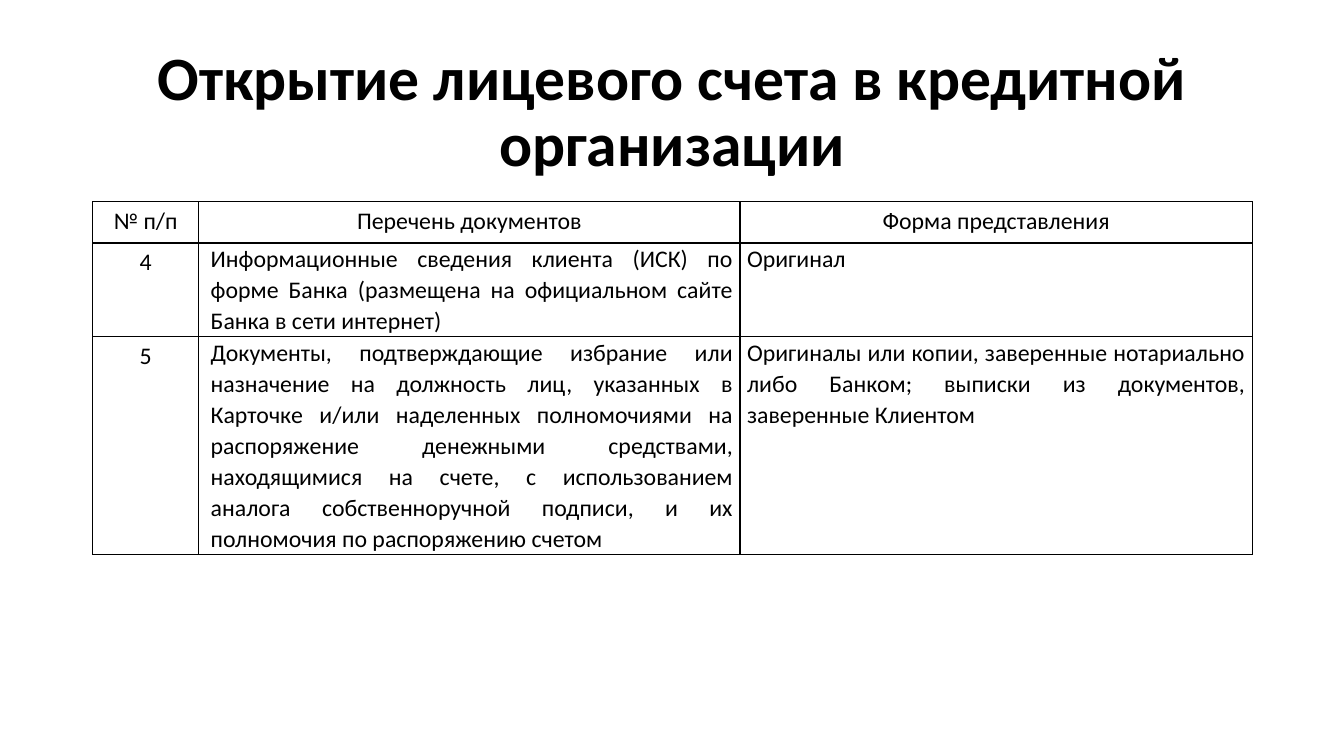
from dataclasses import dataclass

from lxml import etree
from pptx import Presentation
from pptx.dml.color import RGBColor
from pptx.enum.text import MSO_ANCHOR, MSO_AUTO_SIZE, PP_ALIGN
from pptx.oxml.ns import qn
from pptx.util import Pt

CENTER, JUSTIFY = PP_ALIGN.CENTER, PP_ALIGN.JUSTIFY
MIDDLE = MSO_ANCHOR.MIDDLE
NO_AUTOFIT = MSO_AUTO_SIZE.NONE
TITLE_ONLY = 5
EMU_PER_PX = 9144


@dataclass(frozen=True)
class Theme:
    """Colours, font and type sizes of the slide."""
    font: str = "Calibri"
    ink: str = "000000"
    paper: str = "FFFFFF"
    title_size: int = 44
    table_size: int = 17
    border: int = 1


THEME = Theme()
TITLE = "Открытие лицевого счета в кредитной организации"
COLUMNS = (105, 537, 508)
ROW_HEIGHTS = (41, 92, 208)
ROWS = (
    ("№ п/п", "Перечень документов", "Форма представления"),
    ("4",
     "Информационные сведения клиента (ИСК) по форме Банка "
     "(размещена на официальном сайте Банка в сети интернет)",
     "Оригинал"),
    ("5",
     "Документы, подтверждающие избрание или назначение на должность лиц, "
     "указанных в Карточке и/или наделенных полномочиями на распоряжение "
     "денежными средствами, находящимися на счете, с использованием аналога "
     "собственноручной подписи, и их полномочия по распоряжению счетом",
     "Оригиналы или копии, заверенные нотариально либо Банком; "
     "выписки из документов, заверенные Клиентом"),
)


def px(n):
    """Turn whole px into EMU."""
    return n * EMU_PER_PX


def write(tf, text, size=THEME.table_size, bold=False, align=CENTER,
          spacing=None, indent=0):
    """Put one formatted paragraph into a text frame."""
    p = tf.paragraphs[0]
    p.alignment = align
    if spacing:
        p.line_spacing = spacing
    if indent:
        pPr = p._p.get_or_add_pPr()
        pPr.set("marL", str(px(indent)))
        pPr.set("indent", "0")
    r = p.add_run()
    r.text = text
    r.font.name = THEME.font
    r.font.size = Pt(size)
    r.font.bold = bold
    r.font.color.rgb = RGBColor.from_string(THEME.ink)


def add_borders(cell):
    """Draw a solid line on each side of a cell."""
    tcPr = cell._tc.get_or_add_tcPr()
    for i, side in enumerate(("lnL", "lnR", "lnT", "lnB")):
        ln = etree.Element(qn(f"a:{side}"), w=str(Pt(THEME.border)))
        fill = etree.SubElement(ln, qn("a:solidFill"))
        etree.SubElement(fill, qn("a:srgbClr"), val=THEME.ink)
        tcPr.insert(i, ln)


def add_title(slide, text, x, y, w, h):
    """Place and fill the title placeholder."""
    sp = slide.shapes.title
    sp.left, sp.top, sp.width, sp.height = px(x), px(y), px(w), px(h)
    tf = sp.text_frame
    tf.word_wrap = True
    tf.auto_size = NO_AUTOFIT
    tf.vertical_anchor = MIDDLE
    write(tf, text, size=THEME.title_size, bold=True, spacing=0.9)


def fill_cell(cell, text, row, col):
    """Format a cell as a centred label or as justified body text."""
    cell.fill.background()
    add_borders(cell)
    if row and col:
        cell.margin_left = cell.margin_right = px(7)
        cell.margin_top = cell.margin_bottom = 0
        write(cell.text_frame, text, align=JUSTIFY, spacing=1.07,
              indent=5 if col == 1 else 0)
    else:
        write(cell.text_frame, text)


def add_documents_table(slide, x, y):
    """Build the bordered table of documents."""
    frame = slide.shapes.add_table(len(ROWS), len(COLUMNS), px(x), px(y),
                                   px(sum(COLUMNS)), px(sum(ROW_HEIGHTS)))
    table = frame.table
    table.first_row = table.horz_banding = False
    for column, width in zip(table.columns, COLUMNS):
        column.width = px(width)
    for row, height in zip(table.rows, ROW_HEIGHTS):
        row.height = px(height)
    for i, texts in enumerate(ROWS):
        for j, text in enumerate(texts):
            fill_cell(table.cell(i, j), text, i, j)


def main():
    """Build and save the slide."""
    prs = Presentation()
    prs.slide_width, prs.slide_height = px(1333), px(750)
    slide = prs.slides.add_slide(prs.slide_layouts[TITLE_ONLY])
    bg = slide.background.fill
    bg.solid()
    bg.fore_color.rgb = RGBColor.from_string(THEME.paper)
    add_title(slide, TITLE, 92, 40, 1150, 145)
    add_documents_table(slide, 92, 200)
    prs.save("out.pptx")


if __name__ == "__main__":
    main()
